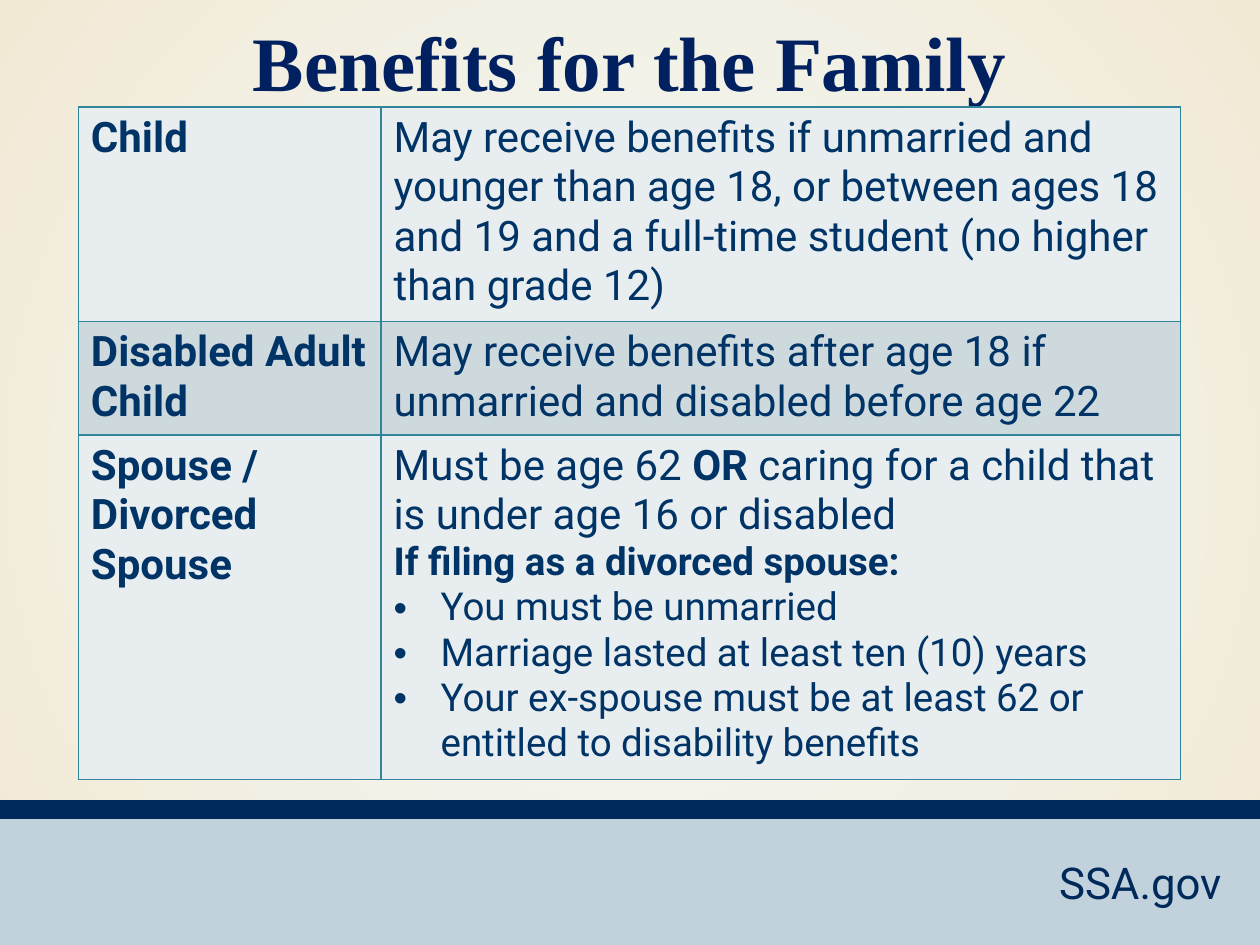
from lxml import etree
from pptx import Presentation
from pptx.dml.color import RGBColor
from pptx.enum.shapes import MSO_SHAPE
from pptx.enum.text import MSO_ANCHOR, PP_ALIGN
from pptx.oxml.ns import qn
from pptx.util import Cm, Pt

RECTANGLE = MSO_SHAPE.RECTANGLE
TOP, MIDDLE = MSO_ANCHOR.TOP, MSO_ANCHOR.MIDDLE
CENTER, RIGHT = PP_ALIGN.CENTER, PP_ALIGN.RIGHT
TITLE_ONLY = 5

COLORS = {
    "glow": "F3FAFB", "sand": "F2E9D5", "footer": "C1D2DC", "stripe": "00295B",
    "title": "002060", "text": "003366", "border": "31859B",
    "light": "E8EDEF", "dark": "CED9DE",
}
TITLE_FONT = {"name": "Times New Roman", "size": Pt(44), "bold": True}
FOOTER_FONT = {"name": "Roboto", "size": Pt(25)}
BODY_FONT = {"name": "Roboto", "size": Pt(24)}
DETAIL_FONT = {"name": "Roboto", "size": Pt(22)}

COLUMN_WIDTHS = [6.1, 16.12]
ROW_HEIGHTS = [4.32, 2.29, 6.93]
BULLET_INDENT = Cm(0.95)

# Each paragraph: (font, bulleted, [(text, bold), ...])
ROWS = [
    ("Child", [
        (BODY_FONT, False, [("May receive benefits if unmarried and younger than age 18, or "
                             "between ages 18 and 19 and a full-time student (no higher than "
                             "grade 12)", False)]),
    ]),
    ("Disabled Adult Child", [
        (BODY_FONT, False, [("May receive benefits after age 18 if unmarried and disabled "
                             "before age 22", False)]),
    ]),
    ("Spouse / Divorced Spouse", [
        (BODY_FONT, False, [("Must be age 62 ", False), ("OR", True),
                            (" caring for a child that is under age 16 or disabled", False)]),
        (DETAIL_FONT, False, [("If filing as a divorced spouse:", True)]),
        (DETAIL_FONT, True, [("You must be unmarried", False)]),
        (DETAIL_FONT, True, [("Marriage lasted at least ten (10) years", False)]),
        (DETAIL_FONT, True, [("Your ex-spouse must be at least 62 or entitled to disability "
                              "benefits", False)]),
    ]),
]


def rgb(name):
    return RGBColor.from_string(COLORS[name])


def format_font(font, values, color):
    for attribute, value in values.items():
        setattr(font, attribute, value)
    font.color.rgb = rgb(color)


def paint_background(slide):
    fill = slide.background.fill
    fill.gradient()
    for stop, position, color in zip(fill.gradient_stops, (0, 1), ("glow", "sand")):
        stop.position = position
        stop.color.rgb = rgb(color)
    # Turn the linear gradient into a circular one around the centre
    linear = slide.background._cSld.find(".//" + qn("a:lin"))
    circle = etree.Element(qn("a:path"), path="circle")
    etree.SubElement(circle, qn("a:fillToRect"), l="50000", t="50000", r="50000", b="50000")
    linear.getparent().replace(linear, circle)


def add_bar(slide, box, color):
    bar = slide.shapes.add_shape(RECTANGLE, *(Cm(value) for value in box))
    bar.shadow.inherit = False
    bar.fill.solid()
    bar.fill.fore_color.rgb = rgb(color)
    bar.line.fill.background()


def add_footer(slide, left, top, width, height):
    add_bar(slide, (left, top + 0.25, width, height - 0.25), "footer")
    add_bar(slide, (left, top, width, 0.38), "stripe")
    # Web address at the right
    text_box = slide.shapes.add_textbox(
        Cm(left + width - 8.33), Cm(top + 0.99), Cm(7.8), Cm(1.32))
    frame = text_box.text_frame
    frame.word_wrap = True
    frame.vertical_anchor = MIDDLE
    paragraph = frame.paragraphs[0]
    paragraph.alignment = RIGHT
    run = paragraph.add_run()
    run.text = "SSA.gov"
    format_font(run.font, FOOTER_FONT, "stripe")


def place_title(slide, left, top, width, height):
    title = slide.shapes.title
    title.left, title.top, title.width, title.height = map(Cm, (left, top, width, height))
    frame = title.text_frame
    frame.vertical_anchor = TOP
    frame.margin_top = Cm(0.3)
    paragraph = frame.paragraphs[0]
    paragraph.alignment = CENTER
    run = paragraph.add_run()
    run.text = "Benefits for the Family"
    format_font(run.font, TITLE_FONT, "title")


def add_bullet(paragraph):
    properties = paragraph._p.get_or_add_pPr()
    properties.set("marL", str(BULLET_INDENT))
    properties.set("indent", str(-BULLET_INDENT))
    etree.SubElement(properties, qn("a:buFont"), typeface="Arial")
    etree.SubElement(properties, qn("a:buChar"), char="•")


def format_cell(cell, color):
    properties = cell._tc.get_or_add_tcPr()
    for side in ("a:lnL", "a:lnR", "a:lnT", "a:lnB"):
        line = etree.SubElement(properties, qn(side), w=str(Pt(1)))
        solid = etree.SubElement(line, qn("a:solidFill"))
        etree.SubElement(solid, qn("a:srgbClr"), val=COLORS["border"])
    cell.fill.solid()
    cell.fill.fore_color.rgb = rgb(color)


def fill_cell(cell, paragraphs):
    frame = cell.text_frame
    for index, (font, bulleted, runs) in enumerate(paragraphs):
        paragraph = frame.add_paragraph() if index else frame.paragraphs[0]
        if bulleted:
            add_bullet(paragraph)
        for text, bold in runs:
            run = paragraph.add_run()
            run.text = text
            format_font(run.font, {**font, "bold": bold}, "text")


def add_benefits_table(slide, left, top):
    frame = slide.shapes.add_table(
        len(ROW_HEIGHTS), len(COLUMN_WIDTHS), Cm(left), Cm(top),
        Cm(sum(COLUMN_WIDTHS)), Cm(sum(ROW_HEIGHTS)))
    table = frame.table
    table.first_row = table.horz_banding = False
    for column, width in zip(table.columns, COLUMN_WIDTHS):
        column.width = Cm(width)
    for index, (label, details) in enumerate(ROWS):
        table.rows[index].height = Cm(ROW_HEIGHTS[index])
        contents = ([(BODY_FONT, False, [(label, True)])], details)
        for cell, paragraphs in zip(table.rows[index].cells, contents):
            format_cell(cell, "dark" if index % 2 else "light")
            fill_cell(cell, paragraphs)


def main():
    presentation = Presentation()
    presentation.slide_width, presentation.slide_height = Cm(25.4), Cm(19.05)
    slide = presentation.slides.add_slide(presentation.slide_layouts[TITLE_ONLY])
    paint_background(slide)
    add_footer(slide, 0, 16.13, 25.4, 2.92)
    add_benefits_table(slide, 1.58, 2.16)
    place_title(slide, 0, 0, 25.4, 3.68)
    presentation.save("out.pptx")


if __name__ == "__main__":
    main()
